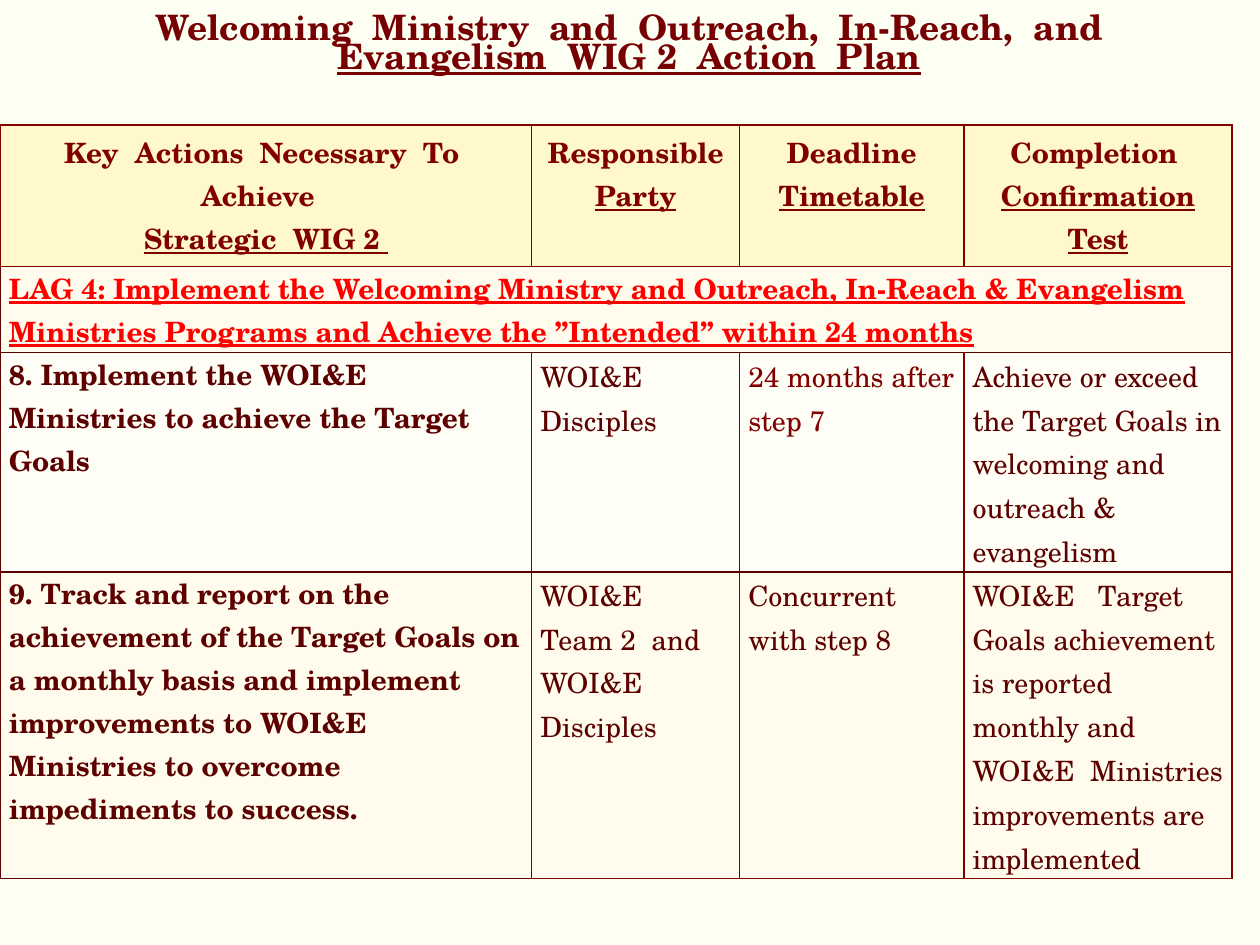
from lxml.etree import SubElement
from pptx import Presentation
from pptx.dml.color import RGBColor
from pptx.enum.text import MSO_ANCHOR, PP_ALIGN
from pptx.oxml.ns import qn
from pptx.util import Inches, Pt

FONT = "TeX Gyre Schola"
IVORY = RGBColor(0xFE, 0xFF, 0xF3)
WINE = RGBColor(0x76, 0x00, 0x02)
MAROON = RGBColor(0x80, 0x00, 0x00)
DARK = RGBColor(0x5D, 0x01, 0x00)
RED = RGBColor(0xFF, 0x00, 0x00)
GOLD = RGBColor(0xFF, 0xF8, 0xCD)
CREAM = RGBColor(0xFF, 0xFC, 0xED)
PALE = RGBColor(0xFF, 0xFE, 0xF6)

TITLE = [("Welcoming  Ministry  and  Outreach,  In-Reach,  and ", False),
         ("Evangelism  WIG 2  Action  Plan", True)]
HEADINGS = [
    [[("Key  Actions  Necessary  To  Achieve  ", False)], [("Strategic  WIG 2 ", True)]],
    [[("Responsible ", False), ("Party", True)]],
    [[("Deadline", False), (" Timetable", True)]],
    [[("Completion ", False)], [("Confirmation Test", True)]],
]
LAG = ("LAG 4: Implement the Welcoming Ministry and Outreach, In-Reach & Evangelism "
       "Ministries Programs and Achieve the ”Intended” within 24 months")
ACTIONS = [
    ("8. Implement the WOI&E  Ministries to achieve the Target Goals",
     "WOI&E   Disciples",
     "24 months after step 7",
     "Achieve or exceed the Target Goals in welcoming and outreach & evangelism"),
    ("9. Track and report on the achievement of the Target Goals on a monthly basis "
     "and implement improvements to WOI&E  Ministries to overcome impediments to success.",
     "WOI&E   Team 2  and WOI&E   Disciples",
     "Concurrent with step 8",
     "WOI&E   Target Goals achievement is reported monthly and WOI&E  Ministries "
     "improvements are implemented"),
]
COLUMN_WIDTHS = [4.22, 1.65, 1.78, 2.13]
ROW_HEIGHTS = [0.54, 0.47, 0.81, 1.14]
ROW_FILLS = [GOLD, CREAM, PALE, CREAM]


def add_runs(paragraph, runs, size, color, bold=True):
    for text, underline in runs:
        run = paragraph.add_run()
        run.text = text
        formats = {"name": FONT, "size": Pt(size), "bold": bold, "underline": underline}
        for attribute, value in formats.items():
            setattr(run.font, attribute, value)
        run.font.color.rgb = color


def style_cell(cell, row, column):
    edges = {
        "a:lnL": DARK if row and not column else MAROON,
        "a:lnR": MAROON,
        "a:lnT": MAROON if row < 2 else DARK,
        "a:lnB": MAROON if row == 0 or (row == 3 and column) else DARK,
    }
    properties = cell._tc.get_or_add_tcPr()
    for tag, color in edges.items():
        line = SubElement(properties, qn(tag), w=str(Pt(1)))
        SubElement(SubElement(line, qn("a:solidFill")), qn("a:srgbClr"), val=str(color))
    cell.fill.solid()
    cell.fill.fore_color.rgb = ROW_FILLS[row]
    if row:
        margins = {"margin_left": 0.07, "margin_right": 0.07, "margin_top": 0, "margin_bottom": 0}
        for side, inches in margins.items():
            setattr(cell, side, Inches(inches))


def add_action(cell, text, color, lead, underline=False):
    paragraph = cell.text_frame.paragraphs[0]
    if lead:
        paragraph.level = 1
        for indent in ("marL", "indent"):
            paragraph._p.get_or_add_pPr().set(indent, "0")
    else:
        paragraph.line_spacing = 1.07
    add_runs(paragraph, [(text, underline)], 16, color, bold=lead)


def add_plan(slide):
    frame = slide.shapes.add_table(len(ROW_HEIGHTS), len(COLUMN_WIDTHS),
                                   Inches(0), Inches(0.99), Inches(9.78), Inches(4.82))
    plan = frame.table
    for column, width in zip(plan.columns, COLUMN_WIDTHS):
        column.width = Inches(width)
    for row, height in zip(plan.rows, ROW_HEIGHTS):
        row.height = Inches(height)
    for row in range(len(ROW_HEIGHTS)):
        for column in range(len(COLUMN_WIDTHS)):
            style_cell(plan.cell(row, column), row, column)

    for column, heading in enumerate(HEADINGS):
        text_frame = plan.cell(0, column).text_frame
        for index, runs in enumerate(heading):
            paragraph = text_frame.add_paragraph() if index else text_frame.paragraphs[0]
            paragraph.alignment = PP_ALIGN.CENTER
            add_runs(paragraph, runs, 16, MAROON)

    plan.cell(1, 0).merge(plan.cell(1, 3))
    add_action(plan.cell(1, 0), LAG, RED, lead=True, underline=True)
    for row, action in enumerate(ACTIONS, start=2):
        for column, text in enumerate(action):
            color = MAROON if (row, column) == (2, 2) else DARK
            add_action(plan.cell(row, column), text, color, lead=column == 0)


def add_title(slide):
    title = slide.shapes.title
    title.left, title.top = Inches(1.06), Inches(-0.26)
    title.width, title.height = Inches(7.87), Inches(1.25)
    title.text_frame.word_wrap = True
    title.text_frame.vertical_anchor = MSO_ANCHOR.MIDDLE
    paragraph = title.text_frame.paragraphs[0]
    paragraph.alignment = PP_ALIGN.CENTER
    paragraph.line_spacing = 0.7
    add_runs(paragraph, TITLE, 20, WINE)


def main():
    """Build the ministry action plan slide."""
    deck = Presentation()
    deck.slide_width, deck.slide_height = Inches(10), Inches(7.5)
    slide = deck.slides.add_slide(deck.slide_layouts[5])
    slide.background.fill.solid()
    slide.background.fill.fore_color.rgb = IVORY
    add_plan(slide)
    add_title(slide)
    deck.save("out.pptx")


if __name__ == "__main__":
    main()
